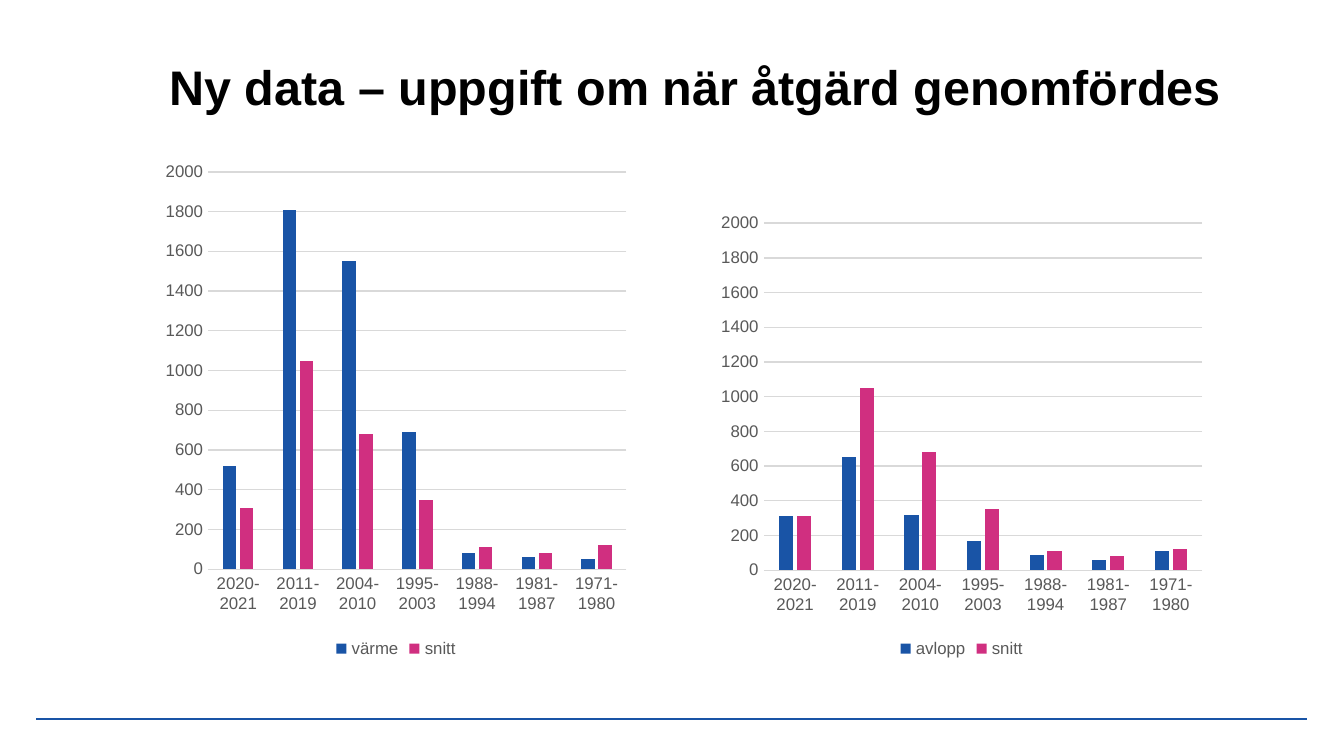
from lxml import etree
from pptx import Presentation
from pptx.chart.data import CategoryChartData
from pptx.dml.color import RGBColor
from pptx.enum.chart import XL_CHART_TYPE, XL_LEGEND_POSITION, XL_TICK_MARK
from pptx.enum.shapes import MSO_CONNECTOR
from pptx.enum.text import MSO_ANCHOR, MSO_AUTO_SIZE, PP_ALIGN
from pptx.oxml.ns import qn
from pptx.util import Cm, Pt

COLUMN = XL_CHART_TYPE.COLUMN_CLUSTERED
BOTTOM = XL_LEGEND_POSITION.BOTTOM
NO_TICK = XL_TICK_MARK.NONE
STRAIGHT = MSO_CONNECTOR.STRAIGHT

# Content
TITLE = "Ny data – uppgift om när åtgärd genomfördes"
YEARS = ["2020-2021", "2011-2019", "2004-2010", "1995-2003",
         "1988-1994", "1981-1987", "1971-1980"]
MEAN = ("snitt", [310, 1050, 680, 350, 110, 80, 120])
CHARTS = [
    # left, top, width, height in cm, first series
    ((2.95, 2.87, 9.07, 9.68), ("värme", [520, 1810, 1550, 690, 80, 60, 50])),
    ((13.44, 3.86, 9.47, 8.69), ("avlopp", [310, 650, 320, 170, 90, 60, 110])),
]

# Format
BLUE, PINK, GRAY, PALE = "1954A6", "D02F80", "595959", "D9D9D9"
HEAD = {"name": "Arial", "size": Pt(26), "bold": True}
BASE = {"name": "Arial", "size": Pt(10)}
LABEL = {"name": "Arial", "size": Pt(9), "bold": False}
AXIS = {"major_tick_mark": NO_TICK, "minor_tick_mark": NO_TICK}
SCALE = {"minimum_scale": 0, "maximum_scale": 2000, "major_unit": 200}
BARS = {"gap_width": 219, "overlap": -27, "vary_by_categories": False}


def apply(item, values):
    for key, value in values.items():
        setattr(item, key, value)


def paint(color, tone):
    color.rgb = RGBColor.from_string(tone)


def style(font, values, tone):
    apply(font, values)
    paint(font.color, tone)


def stroke(line, tone, width):
    paint(line.color, tone)
    line.width = Pt(width)


def place(shape, box):
    names = ("left", "top", "width", "height")
    apply(shape, dict(zip(names, map(Cm, box))))


def add_bars(slide, box, first):
    data = CategoryChartData()
    data.categories = YEARS
    for name, values in (first, MEAN):
        data.add_series(name, values)
    chart = slide.shapes.add_chart(COLUMN, *map(Cm, box), data).chart
    chart.has_title = False
    style(chart.font, BASE, "000000")

    # Columns
    plot = chart.plots[0]
    apply(plot, BARS)
    for series, tone in zip(plot.series, (BLUE, PINK)):
        series.format.fill.solid()
        paint(series.format.fill.fore_color, tone)

    # Axes
    years, count = chart.category_axis, chart.value_axis
    for axis in (years, count):
        apply(axis, AXIS)
        style(axis.tick_labels.font, LABEL, GRAY)
    apply(count, SCALE)
    count.format.line.fill.background()
    stroke(years.format.line, PALE, 0.75)
    stroke(count.major_gridlines.format.line, PALE, 0.75)

    # Legend
    chart.has_legend = True
    apply(chart.legend, {"position": BOTTOM, "include_in_layout": False})
    style(chart.legend.font, LABEL, GRAY)


deck = Presentation()
deck.slide_width, deck.slide_height = Cm(25.4), Cm(14.29)
slide = deck.slides.add_slide(deck.slide_layouts[5])

# Bottom rule
rule = slide.shapes.add_connector(STRAIGHT, Cm(0.69), Cm(13.59),
                                  Cm(24.71), Cm(13.59))
stroke(rule.line, BLUE, 1)
etree.SubElement(rule._element.spPr, qn("a:effectLst"))

# Title
title = slide.shapes.title
place(title, (2.95, 0.71, 20.98, 1.88))
frame = title.text_frame
frame.text = TITLE
apply(frame, {"vertical_anchor": MSO_ANCHOR.MIDDLE, "word_wrap": True,
              "auto_size": MSO_AUTO_SIZE.NONE})
para = frame.paragraphs[0]
apply(para, {"alignment": PP_ALIGN.LEFT, "line_spacing": Pt(30)})
style(para.runs[0].font, HEAD, "000000")

# Charts
for box, first in CHARTS:
    add_bars(slide, box, first)

deck.save("out.pptx")
